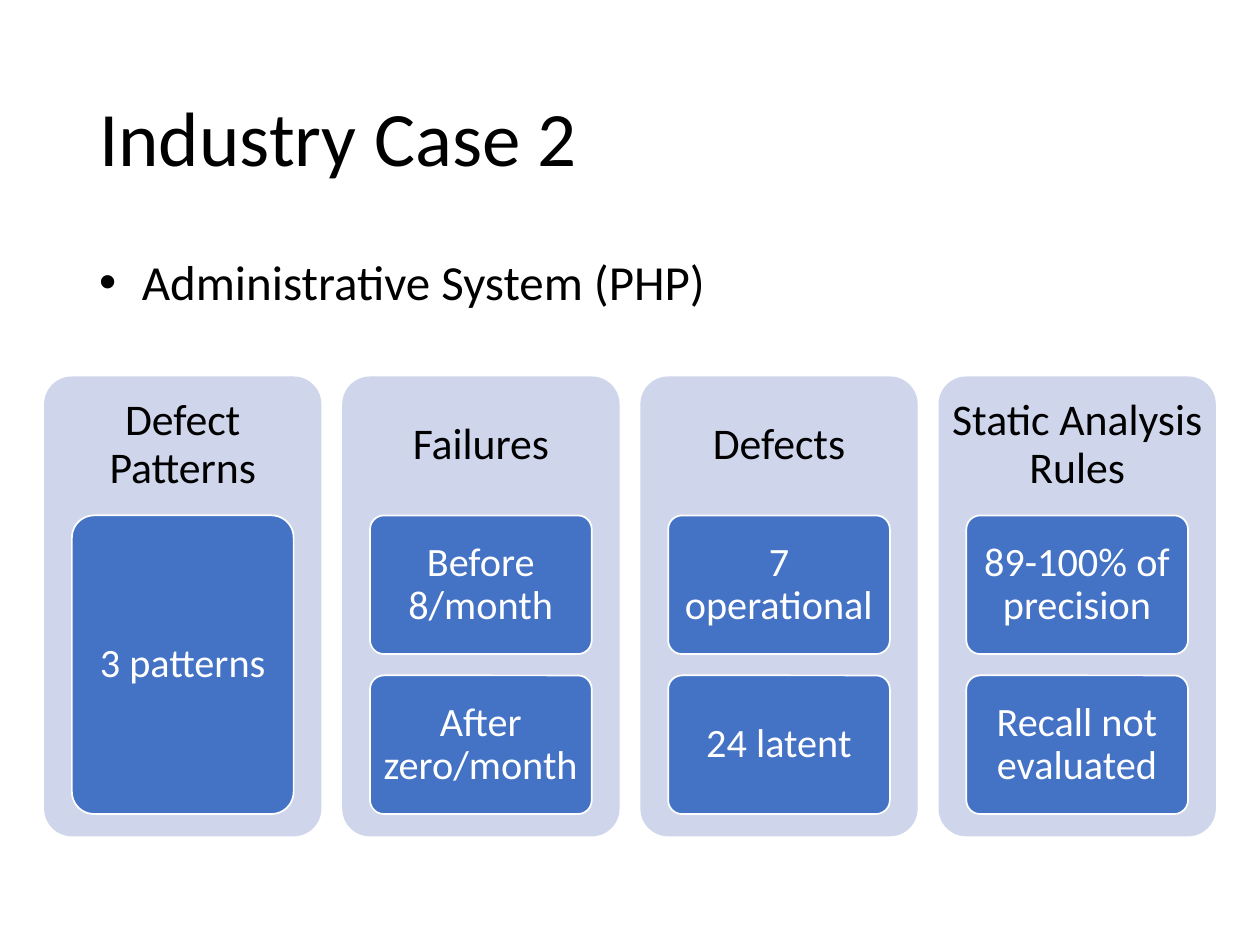
from lxml.etree import SubElement
from pptx import Presentation
from pptx.dml.color import RGBColor
from pptx.enum.shapes import MSO_SHAPE
from pptx.enum.text import MSO_ANCHOR, PP_ALIGN
from pptx.oxml.ns import qn
from pptx.util import Cm, Pt

TITLE = "Industry Case 2"
BULLET = "Administrative System (PHP)"
COLUMNS = [
    ("Defect Patterns", ["3 patterns"]),
    ("Failures", ["Before 8/month", "After zero/month"]),
    ("Defects", ["7 operational", "24 latent"]),
    ("Static Analysis Rules", ["89-100% of precision", "Recall not evaluated"]),
]

FONT = "Calibri"
BLACK, WHITE, PANEL_FILL, BOX_FILL = "000000", "FFFFFF", "CFD5EA", "4472C4"

PANEL_LEFT, PANEL_TOP, PANEL_WIDTH, PANEL_HEIGHT = 0.89, 7.59, 5.59, 9.27
PANEL_PITCH = 6.01
HEADING_HEIGHT = 2.78
BOX_WIDTH, BOX_TOP, BOX_AREA, BOX_GAP = 4.47, 10.39, 6.02, 0.43


def color(value):
    return RGBColor.from_string(value)


def write(shape, text, size, text_color, align, anchor, margins):
    frame = shape.text_frame
    frame.word_wrap = True
    frame.vertical_anchor = anchor
    frame.margin_left = frame.margin_right = Cm(margins[0])
    frame.margin_top = frame.margin_bottom = Cm(margins[1])
    paragraph = frame.paragraphs[0]
    paragraph.text = text
    paragraph.alignment = align
    paragraph.line_spacing = 0.9
    paragraph.font.name = FONT
    paragraph.font.size = Pt(size)
    paragraph.font.color.rgb = color(text_color)
    return paragraph


def add_text(slide, bounds, *style):
    return write(slide.shapes.add_textbox(*map(Cm, bounds)), *style)


def add_rounded(slide, bounds, fill, line=None):
    shape = slide.shapes.add_shape(MSO_SHAPE.ROUNDED_RECTANGLE, *map(Cm, bounds))
    shape.adjustments[0] = 0.1
    shape.shadow.inherit = False
    shape.fill.solid()
    shape.fill.fore_color.rgb = color(fill)
    if line:
        shape.line.color.rgb = color(line)
        shape.line.width = Pt(1)
    else:
        shape.line.fill.background()
    return shape


def add_bullet(paragraph, indent):
    properties = paragraph._p.get_or_add_pPr()
    properties.set("marL", str(Cm(indent)))
    properties.set("indent", str(-Cm(indent)))
    SubElement(properties, qn("a:buFont"), typeface="Arial")
    SubElement(properties, qn("a:buChar"), char="•")


def add_column(slide, left, heading, items):
    add_rounded(slide, (left, PANEL_TOP, PANEL_WIDTH, PANEL_HEIGHT), PANEL_FILL)
    add_text(slide, (left, PANEL_TOP, PANEL_WIDTH, HEADING_HEIGHT), heading, 25,
             BLACK, PP_ALIGN.CENTER, MSO_ANCHOR.MIDDLE, (0.25, 0.25))
    box_left = left + (PANEL_WIDTH - BOX_WIDTH) / 2
    box_height = (BOX_AREA + BOX_GAP) / len(items) - BOX_GAP
    for row, item in enumerate(items):
        top = BOX_TOP + row * (box_height + BOX_GAP)
        box = add_rounded(slide, (box_left, top, BOX_WIDTH, box_height), BOX_FILL, WHITE)
        write(box, item, 23, WHITE, PP_ALIGN.CENTER, MSO_ANCHOR.MIDDLE, (0.15, 0.12))


def main():
    presentation = Presentation()
    presentation.slide_width, presentation.slide_height = Cm(25.4), Cm(19.05)
    slide = presentation.slides.add_slide(presentation.slide_layouts[6])
    add_text(slide, (1.75, 1.02, 21.9, 3.68), TITLE, 44, BLACK,
             PP_ALIGN.LEFT, MSO_ANCHOR.MIDDLE, (0.25, 0.13))
    bullet = add_text(slide, (1.75, 5.08, 21.9, 12.09), BULLET, 28, BLACK,
                      PP_ALIGN.LEFT, MSO_ANCHOR.TOP, (0.25, 0.13))
    bullet.space_before = Pt(10)
    add_bullet(bullet, 0.86)
    for index, (heading, items) in enumerate(COLUMNS):
        add_column(slide, PANEL_LEFT + index * PANEL_PITCH, heading, items)
    presentation.save("out.pptx")


if __name__ == "__main__":
    main()
